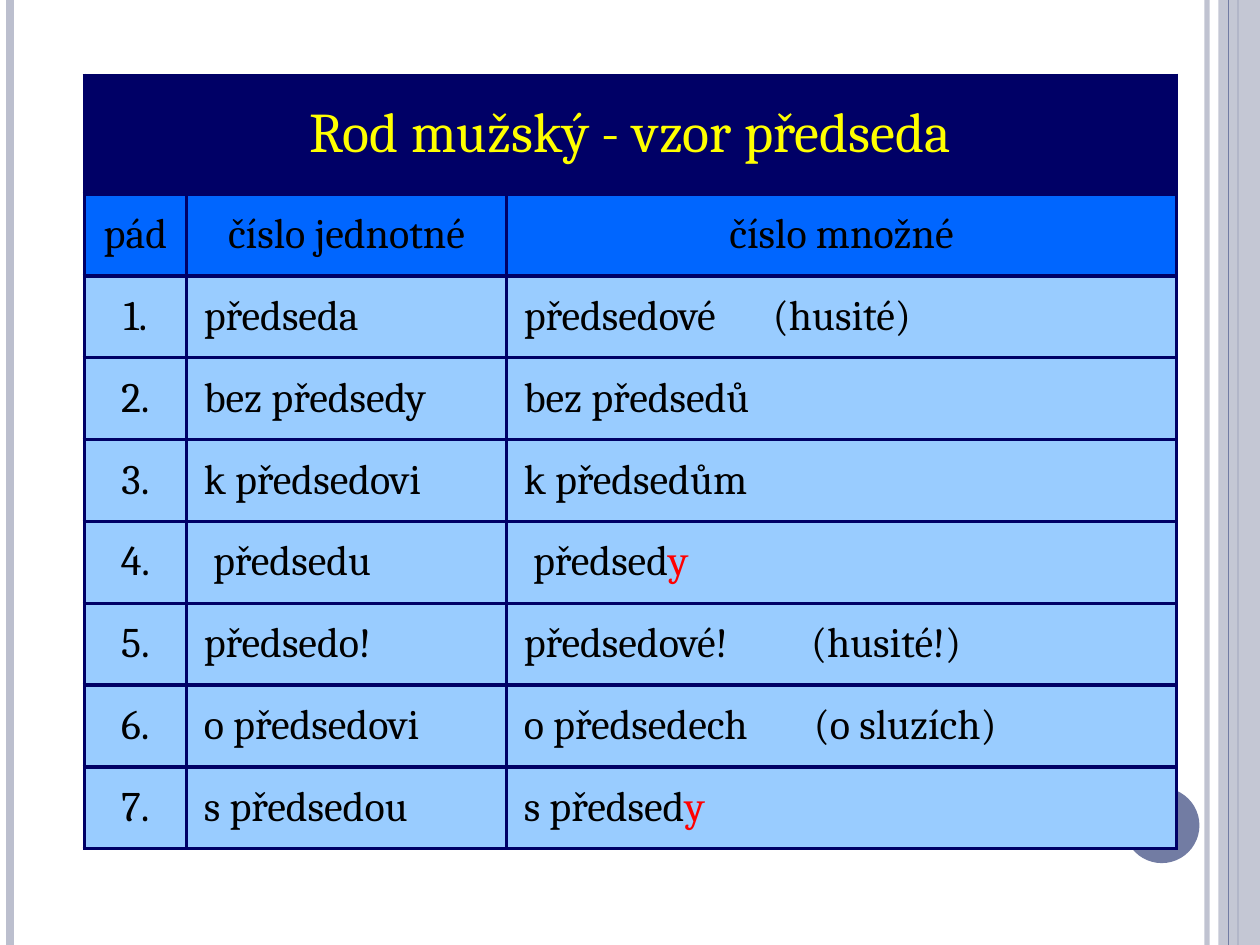
from dataclasses import dataclass

from lxml import etree
from pptx import Presentation
from pptx.dml.color import RGBColor
from pptx.enum import shapes, text
from pptx.oxml import ns
from pptx.util import Cm, Pt


@dataclass(frozen=True)
class Theme:
    font: str = "Cambria"
    title_size: int = 32
    body_size: int = 24
    navy: str = "000066"
    blue: str = "0066FF"
    sky: str = "99CCFF"
    yellow: str = "FFFF00"
    black: str = "000000"
    red: str = "FF0000"
    pale: str = "BCBFCE"
    slate: str = "727CA3"


theme = Theme()


def write_text(paragraph, content, size=theme.body_size, color=theme.black, align=None):
    run = paragraph.add_run()
    run.text = content
    run.font.name = theme.font
    run.font.size = Pt(size)
    run.font.color.rgb = RGBColor.from_string(color)
    if align is not None:
        paragraph.alignment = align


def paint(fill, color, opacity=100):
    fill.solid()
    fill.fore_color.rgb = RGBColor.from_string(color)
    if opacity < 100:
        for color_element in fill._xPr.iter(ns.qn("a:srgbClr")):
            etree.SubElement(color_element, ns.qn("a:alpha"), val=str(opacity * 1000))


presentation = Presentation()
presentation.slide_width = Cm(25.4)
presentation.slide_height = Cm(19.05)
slide = presentation.slides.add_slide(presentation.slide_layouts[6])

# Side decoration: band, vertical rules and disc
decorations = [
    ("rule", 24.33, theme.pale, 3, 93),
    ("rule", 0.21, theme.pale, 4.5, 100),
    ("rule", 24.96, theme.slate, 1.5, 100),
    (shapes.MSO_SHAPE.RECTANGLE, (24.56, 0, 0.84, 19.05), theme.pale, 0, 87),
    ("rule", 24.76, theme.slate, 0.75, 100),
    (shapes.MSO_SHAPE.OVAL, (22.66, 15.88, 1.52, 1.52), theme.slate, 0, 100),
]
for kind, place, color, width, opacity in decorations:
    if kind == "rule":
        rule = slide.shapes.add_connector(
            shapes.MSO_CONNECTOR.STRAIGHT, Cm(place), 0, Cm(place), presentation.slide_height)
        rule.line.width = Pt(width)
        paint(rule.line.fill, color, opacity)
        etree.SubElement(rule._element.spPr, ns.qn("a:effectLst"))
    else:
        shape = slide.shapes.add_shape(kind, *[Cm(length) for length in place])
        shape.shadow.inherit = False
        shape.line.fill.background()
        paint(shape.fill, color, opacity)

# Declension table: singular, plural, red ending, aside, tab stop of the aside in cm
declension = [
    ("předseda", "předsedové", "", "(husité)", 5.02),
    ("bez předsedy", "bez předsedů", "", "", 0),
    ("k předsedovi", "k předsedům", "", "", 0),
    (" předsedu", " předsed", "y", "", 0),
    ("předsedo!", "předsedové!", "", "(husité!)", 5.79),
    ("o předsedovi", "o předsedech", "", "(o sluzích)", 5.85),
    ("s předsedou", "s předsed", "y", "", 0),
]
column_widths = [2.06, 6.45, 13.51]
row_heights = [2.39] + [1.65] * (len(declension) + 1)
table = slide.shapes.add_table(
    len(row_heights), len(column_widths), Cm(1.7), Cm(1.52),
    Cm(sum(column_widths)), Cm(sum(row_heights))).table
table.first_row = table.horz_banding = False
for column, width in zip(table.columns, column_widths):
    column.width = Cm(width)
for row, height in zip(table.rows, row_heights):
    row.height = Cm(height)

# Cell margins, borders and fills
for row_index, row in enumerate(table.rows):
    for column_index, cell in enumerate(row.cells):
        indented = row_index > 1 and column_index > 0
        cell.margin_left = Cm(0.35 if indented else 0.15)
        cell.margin_right = Cm(0.15)
        cell.margin_top = cell.margin_bottom = Cm(0.08)
        cell.vertical_anchor = text.MSO_ANCHOR.MIDDLE
        properties = cell._tc.get_or_add_tcPr()
        for side in ("lnL", "lnR", "lnT", "lnB"):
            border = etree.SubElement(properties, ns.qn(f"a:{side}"), w=str(Pt(2.25)))
            border_fill = etree.SubElement(border, ns.qn("a:solidFill"))
            etree.SubElement(border_fill, ns.qn("a:srgbClr"), val=theme.navy)
        paint(cell.fill, {0: theme.navy, 1: theme.blue}.get(row_index, theme.sky))

# Title and column headings
center = text.PP_ALIGN.CENTER
title_cell = table.cell(0, 0)
title_cell.merge(table.cell(0, 2))
write_text(title_cell.text_frame.paragraphs[0], "Rod mužský - vzor předseda",
           size=theme.title_size, color=theme.yellow, align=center)
for column_index, heading in enumerate(["pád", "číslo jednotné", "číslo množné"]):
    write_text(table.cell(1, column_index).text_frame.paragraphs[0], heading, align=center)

# Case forms
for case, (singular, plural, ending, aside, tab_stop) in enumerate(declension, start=1):
    number, single, multiple = [
        cell.text_frame.paragraphs[0] for cell in table.rows[case + 1].cells]
    write_text(number, f"{case}.", align=center)
    write_text(single, singular)
    write_text(multiple, plural)
    if ending:
        write_text(multiple, ending, color=theme.red)
    if aside:
        tabs = etree.SubElement(multiple._p.get_or_add_pPr(), ns.qn("a:tabLst"))
        etree.SubElement(tabs, ns.qn("a:tab"), pos=str(Cm(tab_stop)), algn="l")
        write_text(multiple, f"\t{aside}")

presentation.save("out.pptx")
